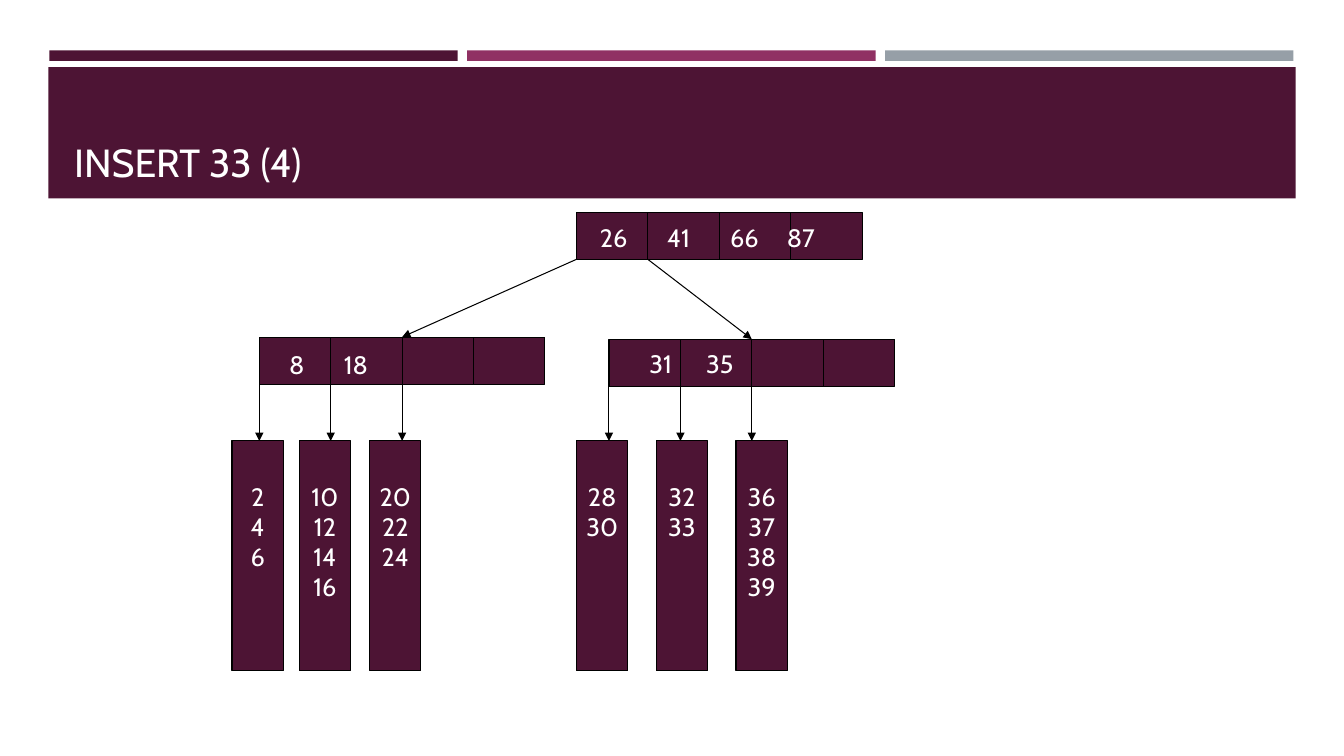
from pptx import Presentation
from pptx.dml.color import RGBColor
from pptx.enum.shapes import MSO_CONNECTOR, MSO_SHAPE
from pptx.enum.text import MSO_ANCHOR, MSO_AUTO_SIZE, PP_ALIGN
from pptx.oxml.ns import qn
from pptx.util import Pt
from lxml.etree import SubElement

COLORS = {"plum": "4D1434", "berry": "903163", "grey": "969FA7",
          "black": "000000", "white": "FFFFFF"}
FONT = "Cabin"
SCALE = 9525
CELL, NODE_HEIGHT = 68, 45
LEAF_TOP, LEAF_WIDTH, LEAF_HEIGHT = 420, 49, 219
TOP, BOTTOM = 0, 2


def px(length):
    """Turn px into EMU."""
    return length * SCALE


def color(name):
    """Look up a named colour."""
    return RGBColor.from_string(COLORS[name])


class TreeSlide:
    """A slide with a title banner and a B+ tree."""

    def __init__(self, deck):
        """Add a title-only page to the deck."""
        self.page = deck.slides.add_slide(deck.slide_layouts[5])

    def style_text(self, frame, size, align):
        """Format every paragraph and run of a frame."""
        for para in frame.paragraphs:
            para.alignment = align
            for span in para.runs:
                span.font.size = Pt(size)
                span.font.name = FONT
                span.font.color.rgb = color("white")

    def box(self, left, top, width, height, fill="plum", outline=True, parent=None):
        """Draw a filled rectangle."""
        shapes = (parent or self.page).shapes
        box = shapes.add_shape(MSO_SHAPE.RECTANGLE, px(left), px(top), px(width), px(height))
        box.shadow.inherit = False
        box.fill.solid()
        box.fill.fore_color.rgb = color(fill)
        if outline:
            box.line.color.rgb = color("black")
            box.line.width = Pt(0.75)
        else:
            box.line.fill.background()
        return box

    def line(self, start, end, source=None, target=None, arrow=False, parent=None):
        """Draw a line, joined to a source or target (box, side) if given."""
        shapes = (parent or self.page).shapes
        line = shapes.add_connector(MSO_CONNECTOR.STRAIGHT, *map(px, start + end))
        if source:
            line.begin_connect(*source)
        if target:
            line.end_connect(*target)
        line.line.color.rgb = color("black")
        line.line.width = Pt(0.75)
        if arrow:
            SubElement(line.line._get_or_add_ln(), qn("a:tailEnd"), type="triangle")
        SubElement(line.element.spPr, qn("a:effectLst"))

    def title(self, text):
        """Place the title over its banner and colour strips."""
        title = self.page.shapes.title
        bars = [self.box(47 + 398 * index, 48, 389, 10, fill, False)
                for index, fill in enumerate(("plum", "berry", "grey"))]
        for bar in bars + [self.box(46, 64, 1188, 125, outline=False)]:
            title.element.addprevious(bar.element)
        title.left, title.top, title.width, title.height = map(px, (61, 74, 1158, 107))
        frame = title.text_frame
        frame.text = text
        frame.auto_size = MSO_AUTO_SIZE.NONE
        frame.vertical_anchor = MSO_ANCHOR.BOTTOM
        self.style_text(frame, 28, PP_ALIGN.LEFT)

    def node(self, left, top, keys, keys_left, keys_top, tabs):
        """Draw a four-cell index node with its keys on tab stops."""
        group = self.page.shapes.add_group_shape()
        node = self.box(left, top, 4 * CELL, NODE_HEIGHT, parent=group)
        for index in (1, 2, 3):
            x = left + index * CELL
            middle = index == 2
            self.line((x, top), (x, top + NODE_HEIGHT), (node, TOP) if middle else None,
                      (node, BOTTOM) if middle else None, parent=group)
        label = group.shapes.add_textbox(px(keys_left), px(keys_top), px(244), px(38))
        frame = label.text_frame
        frame.word_wrap = True
        frame.text = "\t".join(keys)
        self.style_text(frame, 18, PP_ALIGN.LEFT)
        stops = SubElement(frame.paragraphs[0]._p.get_or_add_pPr(), qn("a:tabLst"))
        for tab in tabs:
            SubElement(stops, qn("a:tab"), pos=str(px(tab)), algn="l")
        return node

    def leaf(self, left, values):
        """Draw a leaf with one value per line."""
        frame = self.box(left, LEAF_TOP, LEAF_WIDTH, LEAF_HEIGHT).text_frame
        frame.text = "\n".join(values)
        frame.word_wrap = False
        frame.vertical_anchor = MSO_ANCHOR.TOP
        frame.margin_left = frame.margin_right = 0
        frame.margin_top = px(38)
        self.style_text(frame, 18, PP_ALIGN.CENTER)

    def branch(self, node, left, top, leaves):
        """Draw the leaves of a node and the arrows to them."""
        for index, (leaf_left, values) in enumerate(leaves):
            self.leaf(leaf_left, values.split())
            x = left + index * CELL
            self.line((x, top + NODE_HEIGHT), (x, LEAF_TOP),
                      source=(node, BOTTOM) if index == 2 else None, arrow=True)


def main():
    """Build and save the deck."""
    deck = Presentation()
    deck.slide_width, deck.slide_height = px(1280), px(720)
    slide = TreeSlide(deck)
    slide.title("INSERT 33 (4)")

    root_left, root_top = 549, 202
    slide.node(root_left, root_top, ("26", "41", "66", "87"), 562, 207, (64, 124, 178))
    children = [
        (247, 321, ("8", "18"), 266, 328, 52,
         [(221, "2 4 6"), (285, "10 12 14 16"), (352, "20 22 24")]),
        (580, 323, ("31", "35"), 609, 327, 54,
         [(549, "28 30"), (625, "32 33"), (701, "36 37 38 39")]),
    ]
    for index, (left, top, keys, keys_left, keys_top, tab, leaves) in enumerate(children):
        node = slide.node(left, top, keys, keys_left, keys_top, (tab,))
        slide.line((root_left + index * CELL, root_top + NODE_HEIGHT),
                   (left + 2 * CELL, top), target=(node, TOP), arrow=True)
        slide.branch(node, left, top, leaves)
    deck.save("out.pptx")


if __name__ == "__main__":
    main()
